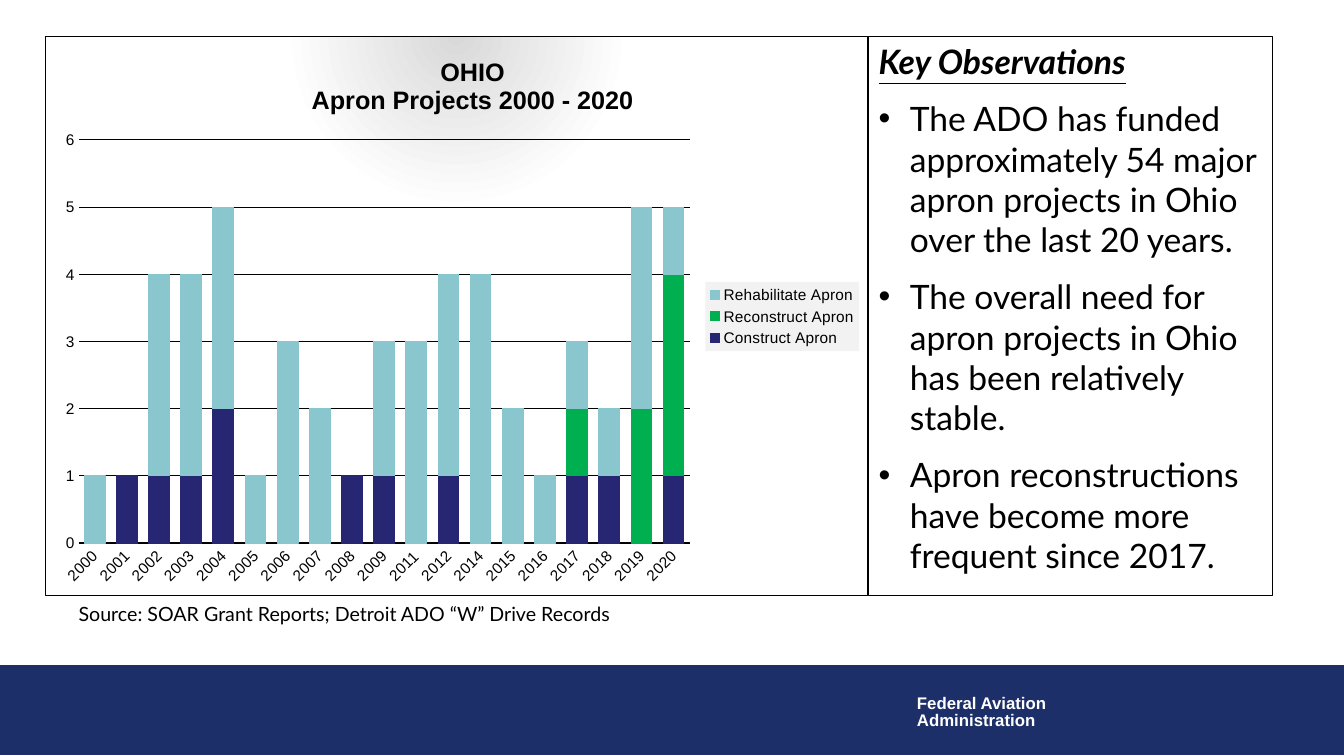
from dataclasses import dataclass, field

from lxml import etree
from pptx import Presentation
from pptx.chart.data import CategoryChartData
from pptx.dml.color import RGBColor
from pptx.enum.chart import XL_CHART_TYPE, XL_LEGEND_POSITION, XL_TICK_MARK
from pptx.enum.shapes import MSO_SHAPE
from pptx.enum.text import MSO_ANCHOR, PP_ALIGN
from pptx.oxml import parse_xml
from pptx.oxml.ns import nsdecls, qn
from pptx.util import Cm, Pt

STACKED = XL_CHART_TYPE.COLUMN_STACKED
LEGEND_RIGHT = XL_LEGEND_POSITION.RIGHT
NO_TICK = XL_TICK_MARK.NONE
RECTANGLE = MSO_SHAPE.RECTANGLE
TOP = MSO_ANCHOR.TOP
LEFT = PP_ALIGN.LEFT


@dataclass(frozen=True)
class Theme:
    navy: str = "1D2F68"
    black: str = "000000"
    white: str = "FFFFFF"
    glow: str = "D9D9D9"
    legend_fill: str = "F2F2F2"
    construct: str = "262673"
    reconstruct: str = "00B050"
    rehabilitate: str = "8AC6CD"
    heading_font: str = "Arial"
    body_font: str = "Lato"
    body_size: float = 24
    title_size: float = 18
    source_size: float = 14
    footer_size: float = 12
    axis_size: float = 11
    thin_line: float = 0.75
    axis_line: float = 2


THEME = Theme()


@dataclass(frozen=True)
class Box:
    left: float
    top: float
    width: float
    height: float

    def lengths(self) -> list:
        return [Cm(value) for value in (self.left, self.top, self.width, self.height)]


@dataclass(frozen=True)
class Line:
    text: str
    bullet: bool = False
    font: dict = field(default_factory=dict)
    layout: dict = field(default_factory=dict)


@dataclass(frozen=True)
class TextBlock:
    box: Box
    lines: list
    font: dict
    border: str = ""
    wrap: bool = True


@dataclass(frozen=True)
class ProjectSeries:
    name: str
    color: str
    counts: dict


YEARS = [year for year in range(2000, 2021) if year not in (2010, 2013)]
SERIES = [
    ProjectSeries("Construct Apron", THEME.construct,
                  {2001: 1, 2002: 1, 2003: 1, 2004: 2, 2008: 1, 2009: 1,
                   2012: 1, 2017: 1, 2018: 1, 2020: 1}),
    ProjectSeries("Reconstruct Apron", THEME.reconstruct, {2017: 1, 2019: 2, 2020: 3}),
    ProjectSeries("Rehabilitate Apron", THEME.rehabilitate,
                  {2000: 1, 2002: 3, 2003: 3, 2004: 3, 2005: 1, 2006: 3, 2007: 2,
                   2009: 2, 2011: 3, 2012: 3, 2014: 4, 2015: 2, 2016: 1, 2017: 1,
                   2018: 1, 2019: 3, 2020: 1}),
]
TITLE_LINES = ["OHIO", "Apron Projects 2000 - 2020"]
CHART_BOX = Box(1.14, 0.91, 20.73, 14.1)
BAND_BOX = Box(0, 16.76, 33.87, 2.26)
SPACED = {"space_before": Pt(12)}
TIGHT = {"line_spacing": 0.85}
TEXT_BLOCKS = [
    TextBlock(Box(22.86, 17.4, 3.81, 1.12),
              [Line("Federal Aviation", layout=TIGHT), Line("Administration", layout=TIGHT)],
              {"name": THEME.heading_font, "size": Pt(THEME.footer_size),
               "bold": True, "color": THEME.white}, wrap=False),
    TextBlock(Box(1.73, 15.04, 18.39, 0.86),
              [Line("Source: SOAR Grant Reports; Detroit ADO “W” Drive Records")],
              {"name": THEME.body_font, "size": Pt(THEME.source_size), "color": THEME.black}),
    TextBlock(Box(21.89, 0.91, 10.19, 14.1),
              [Line("Key Observations", font={"bold": True, "italic": True, "underline": True}),
               Line("The ADO has funded approximately 54 major apron projects in Ohio "
                    "over the last 20 years.", True, layout=SPACED),
               Line("The overall need for apron projects in Ohio has been relatively stable.",
                    True, layout=SPACED),
               Line("Apron reconstructions have become more frequent since 2017.",
                    True, layout=SPACED)],
              {"name": THEME.body_font, "size": Pt(THEME.body_size), "color": THEME.black},
              border=THEME.black),
]


def apply_format(target, values: dict) -> None:
    for name, value in values.items():
        if name == "color":
            target.color.rgb = RGBColor.from_string(value)
        else:
            setattr(target, name, value)


def set_fill(fill, color: str) -> None:
    fill.solid()
    fill.fore_color.rgb = RGBColor.from_string(color)


def set_line(line, color: str, width: float = THEME.thin_line) -> None:
    apply_format(line, {"color": color, "width": Pt(width)})


def add_bullet(paragraph) -> None:
    properties = paragraph._p.get_or_add_pPr()
    properties.set("marL", str(Cm(0.79)))
    properties.set("indent", str(-Cm(0.79)))
    etree.SubElement(properties, qn("a:buFont")).set("typeface", "Arial")
    etree.SubElement(properties, qn("a:buChar")).set("char", "•")


def draw_band(slide) -> None:
    shape = slide.shapes.add_shape(RECTANGLE, *BAND_BOX.lengths())
    shape.shadow.inherit = False
    set_fill(shape.fill, THEME.navy)
    set_line(shape.line, THEME.navy)


def draw_text(slide, block: TextBlock) -> None:
    if block.border:
        shape = slide.shapes.add_shape(RECTANGLE, *block.box.lengths())
        shape.shadow.inherit = False
        shape.fill.background()
        set_line(shape.line, block.border)
    else:
        shape = slide.shapes.add_textbox(*block.box.lengths())
    frame = shape.text_frame
    apply_format(frame, {"word_wrap": block.wrap, "vertical_anchor": TOP})
    for index, line in enumerate(block.lines):
        paragraph = frame.add_paragraph() if index else frame.paragraphs[0]
        if line.bullet:
            add_bullet(paragraph)
        apply_format(paragraph, {"alignment": LEFT, **line.layout})
        run = paragraph.add_run()
        run.text = line.text
        apply_format(run.font, {**block.font, **line.font})


def place(element, index: int, inner: bool = False, **fractions: float) -> None:
    for layout in element.findall(qn("c:layout")):
        element.remove(layout)
    layout = etree.Element(qn("c:layout"))
    manual = etree.SubElement(layout, qn("c:manualLayout"))
    if inner:
        etree.SubElement(manual, qn("c:layoutTarget")).set("val", "inner")
    for axis in "xy":
        etree.SubElement(manual, qn(f"c:{axis}Mode")).set("val", "edge")
    for name, value in fractions.items():
        etree.SubElement(manual, qn(f"c:{name}")).set("val", str(value))
    element.insert(index, layout)


def chart_background():
    stops = [(0, THEME.glow), (35000, THEME.white), (100000, THEME.white)]
    colors = "".join(f'<a:gs pos="{position}"><a:srgbClr val="{color}"/></a:gs>'
                     for position, color in stops)
    return parse_xml(
        f'<c:spPr {nsdecls("c", "a")}><a:gradFill><a:gsLst>{colors}</a:gsLst>'
        '<a:path path="circle"><a:fillToRect l="50000" t="-80000" r="50000" b="180000"/></a:path>'
        f'</a:gradFill><a:ln w="{Pt(THEME.thin_line)}"><a:solidFill>'
        f'<a:srgbClr val="{THEME.black}"/></a:solidFill></a:ln></c:spPr>')


def draw_chart(slide) -> None:
    data = CategoryChartData()
    data.categories = [str(year) for year in YEARS]
    for series in SERIES:
        data.add_series(series.name, [series.counts.get(year) for year in YEARS])
    chart = slide.shapes.add_chart(STACKED, *CHART_BOX.lengths(), data).chart
    label_font = {"name": THEME.heading_font, "size": Pt(THEME.axis_size), "color": THEME.black}
    apply_format(chart.font, label_font)
    chart._chartSpace.chart.addnext(chart_background())

    plot = chart.plots[0]
    apply_format(plot, {"gap_width": 55, "overlap": 100, "vary_by_categories": False})
    for drawn, series in zip(plot.series, SERIES):
        set_fill(drawn.format.fill, series.color)
        set_line(drawn.format.line, series.color)
    place(chart._chartSpace.chart.plotArea, 0, True, x=0.04, y=0.185, w=0.744, h=0.722)

    years, counts = chart.category_axis, chart.value_axis
    for axis in (years, counts):
        apply_format(axis, {"major_tick_mark": NO_TICK, "minor_tick_mark": NO_TICK})
        apply_format(axis.tick_labels.font, label_font)
    set_line(years.format.line, THEME.black, THEME.axis_line)
    years._element.find(qn("c:txPr")).find(qn("a:bodyPr")).set("rot", "-2700000")
    apply_format(counts, {"minimum_scale": 0, "maximum_scale": 6, "major_unit": 1,
                          "has_major_gridlines": True})
    counts.format.line.fill.background()
    set_line(counts.major_gridlines.format.line, THEME.black)

    frame = chart.chart_title.text_frame
    for index, text in enumerate(TITLE_LINES):
        paragraph = frame.add_paragraph() if index else frame.paragraphs[0]
        run = paragraph.add_run()
        run.text = text
        apply_format(run.font, {**label_font, "size": Pt(THEME.title_size), "bold": True})
    place(chart.chart_title._element, 1, x=0.32, y=0.03)

    chart.has_legend = True
    apply_format(chart.legend, {"position": LEGEND_RIGHT, "include_in_layout": False})
    apply_format(chart.legend.font, label_font)
    legend = chart.legend._element
    place(legend, 1, x=0.803, y=0.439, w=0.187, h=0.124)
    legend.find(qn("c:overlay")).addnext(parse_xml(
        f'<c:spPr {nsdecls("c", "a")}><a:solidFill>'
        f'<a:srgbClr val="{THEME.legend_fill}"/></a:solidFill></c:spPr>'))


def main() -> None:
    presentation = Presentation()
    apply_format(presentation, {"slide_width": Cm(33.87), "slide_height": Cm(19.05)})
    slide = presentation.slides.add_slide(presentation.slide_layouts[6])
    draw_band(slide)
    for block in TEXT_BLOCKS:
        draw_text(slide, block)
    draw_chart(slide)
    presentation.save("out.pptx")


if __name__ == "__main__":
    main()
